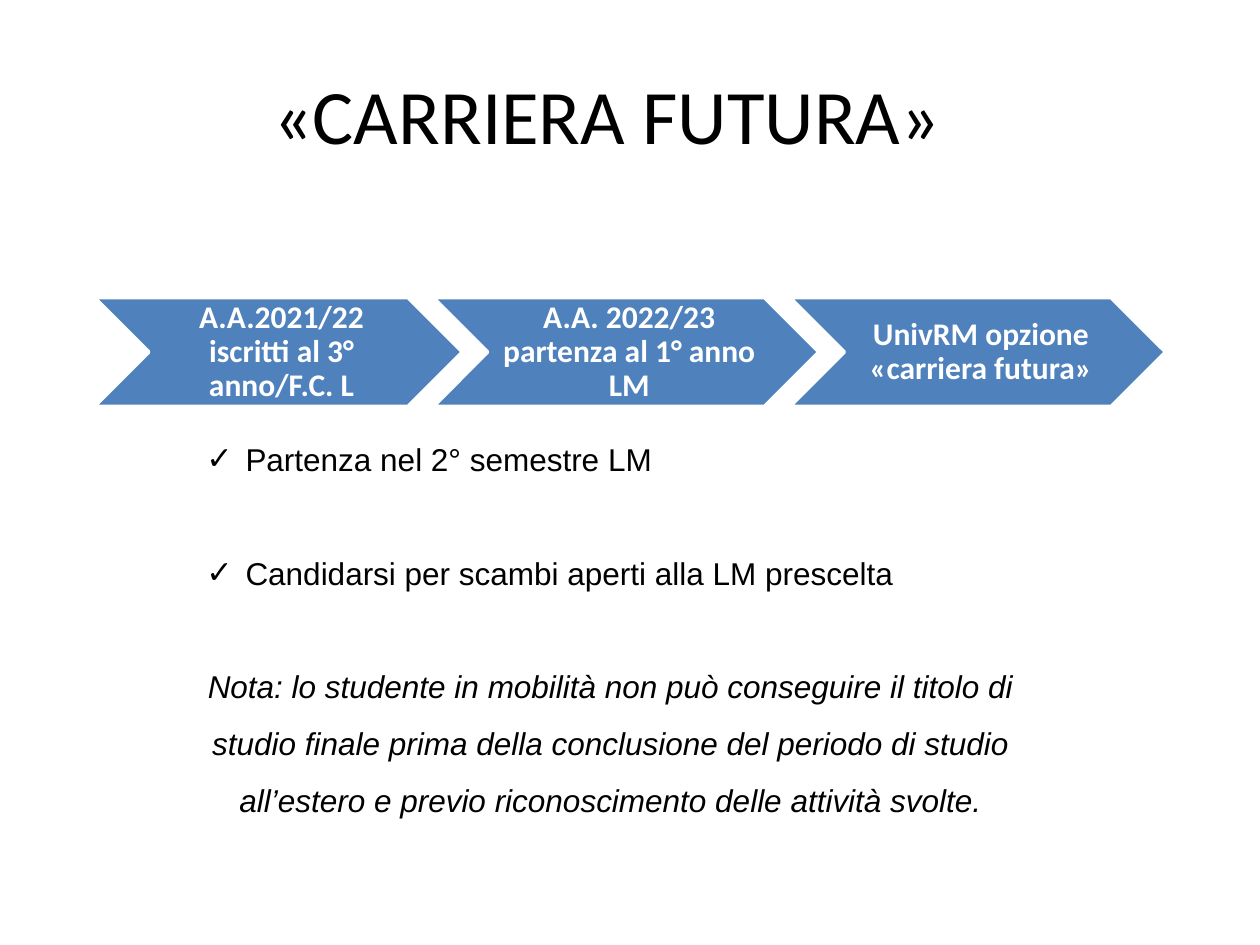
from dataclasses import dataclass

from lxml.etree import SubElement
from pptx import Presentation
from pptx.dml.color import RGBColor
from pptx.enum.shapes import MSO_SHAPE
from pptx.enum.text import MSO_ANCHOR, PP_ALIGN
from pptx.oxml.ns import qn
from pptx.util import Inches, Pt


@dataclass(frozen=True)
class Theme:
    ink: RGBColor = RGBColor(0, 0, 0)
    paper: RGBColor = RGBColor(255, 255, 255)
    accent: RGBColor = RGBColor(0x4F, 0x81, 0xBD)
    heading_font: str = "Calibri"
    body_font: str = "Arial"
    title_size: int = 44
    body_size: int = 18
    paragraph_gap: float = 32.5


class SlideBuilder:
    def __init__(self, presentation, theme):
        self.presentation = presentation
        self.theme = theme
        self.slide = presentation.slides.add_slide(presentation.slide_layouts[5])

    def area(self, left, top, width, height):
        page_width = self.presentation.slide_width
        page_height = self.presentation.slide_height
        return (round(left * page_width), round(top * page_height),
                round(width * page_width), round(height * page_height))

    def format_paragraph(self, paragraph, font_name, size, color,
                         alignment=PP_ALIGN.CENTER, bold=False, italic=False):
        paragraph.alignment = alignment
        for run in paragraph.runs:
            font = run.font
            font.name, font.size = font_name, Pt(size)
            font.bold, font.italic = bold, italic
            font.color.rgb = color

    def title(self, text, box):
        shape = self.slide.shapes.title
        shape.left, shape.top, shape.width, shape.height = self.area(*box)
        text_frame = shape.text_frame
        text_frame.text = text
        text_frame.vertical_anchor = MSO_ANCHOR.MIDDLE
        self.format_paragraph(text_frame.paragraphs[0], self.theme.heading_font,
                              self.theme.title_size, self.theme.ink)

    def chevron(self, text, box):
        shape = self.slide.shapes.add_shape(MSO_SHAPE.CHEVRON, *self.area(*box))
        shape.shadow.inherit = False
        shape.fill.solid()
        shape.fill.fore_color.rgb = self.theme.accent
        shape.line.color.rgb = self.theme.paper
        shape.line.width = Pt(2)
        text_frame = shape.text_frame
        text_frame.text = text
        text_frame.word_wrap = True
        text_frame.vertical_anchor = MSO_ANCHOR.MIDDLE
        text_frame.margin_left = Inches(0.08)
        text_frame.margin_right = Inches(0.03)
        text_frame.margin_top = text_frame.margin_bottom = Inches(0.03)
        paragraph = text_frame.paragraphs[0]
        paragraph.line_spacing = 0.9
        self.format_paragraph(paragraph, self.theme.heading_font,
                              self.theme.body_size, self.theme.paper, bold=True)

    def chevron_row(self, steps, left, top, height, overlap):
        for text, width in steps:
            self.chevron(text, (left, top, width, height))
            left += width - overlap

    def check_mark(self, paragraph):
        properties = paragraph._p.get_or_add_pPr()
        properties.set("marL", str(Inches(0.31)))
        properties.set("indent", str(-Inches(0.31)))
        SubElement(properties, qn("a:buFont"), typeface=self.theme.body_font)
        SubElement(properties, qn("a:buChar"), char="✓")

    def checklist(self, points, remark, box):
        text_frame = self.slide.shapes.add_textbox(*self.area(*box)).text_frame
        text_frame.word_wrap = True
        text_frame.text = "\n".join([*points, remark])
        *point_paragraphs, remark_paragraph = text_frame.paragraphs
        for paragraph in text_frame.paragraphs:
            paragraph.line_spacing = 1.5
        for paragraph in point_paragraphs:
            paragraph.space_after = Pt(self.theme.paragraph_gap)
            self.format_paragraph(paragraph, self.theme.body_font,
                                  self.theme.body_size, self.theme.ink,
                                  PP_ALIGN.JUSTIFY)
            self.check_mark(paragraph)
        self.format_paragraph(remark_paragraph, self.theme.body_font,
                              self.theme.body_size, self.theme.ink, italic=True)


def main():
    presentation = Presentation()
    presentation.slide_width = Inches(10)
    presentation.slide_height = Inches(7.5)
    builder = SlideBuilder(presentation, Theme())
    builder.title("«CARRIERA FUTURA»", (0.043, 0.037, 0.878, 0.167))
    builder.chevron_row(
        [
            ("A.A.2021/22 iscritti al 3° anno/F.C. L", 0.292),
            ("A.A. 2022/23 partenza al 1° anno LM", 0.306),
            ("UnivRM opzione «carriera futura»", 0.298),
        ],
        left=0.075, top=0.315, height=0.115, overlap=0.023,
    )
    builder.checklist(
        ["Partenza nel 2° semestre LM",
         "Candidarsi per scambi aperti alla LM prescelta"],
        "Nota: lo studente in mobilità non può conseguire il titolo di studio "
        "finale prima della conclusione del periodo di studio all’estero e "
        "previo riconoscimento delle attività svolte.",
        (0.154, 0.439, 0.661, 0.477),
    )
    presentation.save("out.pptx")


if __name__ == "__main__":
    main()
